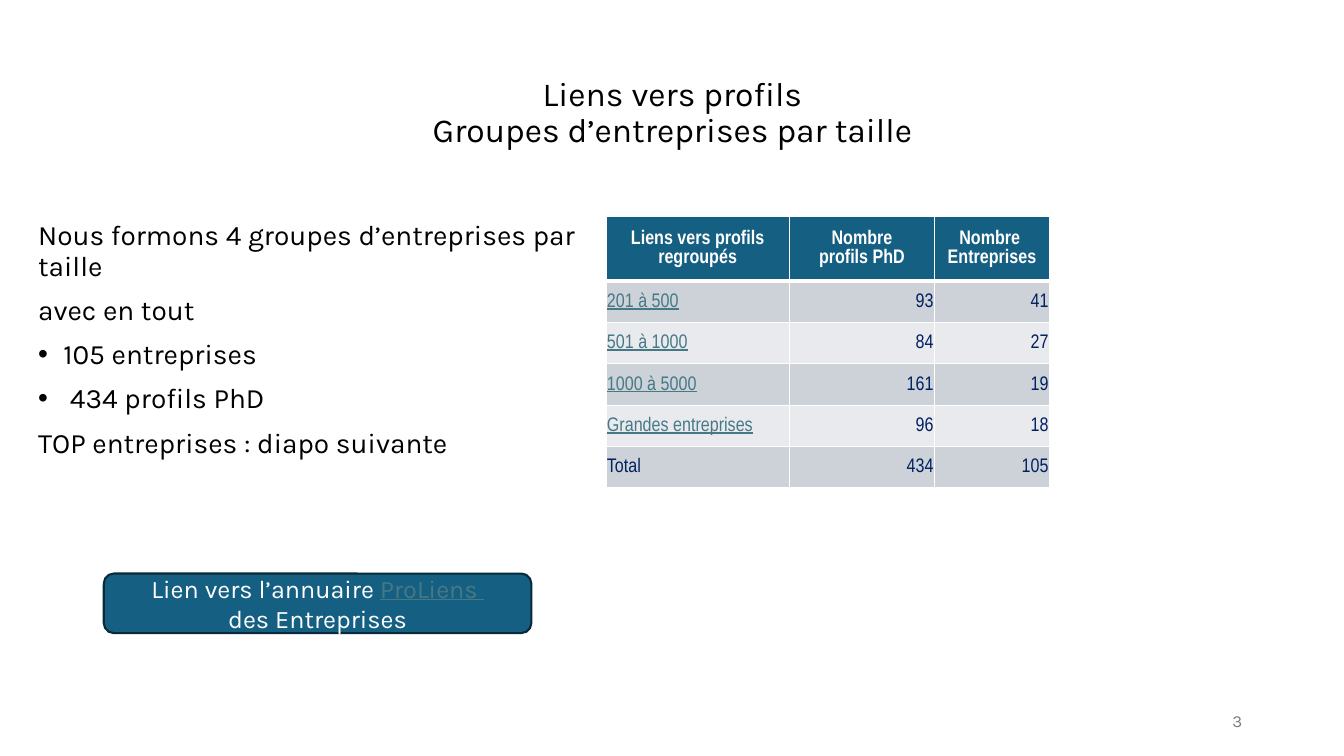
"""Build the slide on company groups by size, with its table and directory button."""
from dataclasses import dataclass

from lxml import etree
from pptx import Presentation
from pptx.dml.color import RGBColor
from pptx.enum.shapes import MSO_SHAPE
from pptx.enum.text import MSO_ANCHOR, PP_ALIGN
from pptx.oxml.ns import qn
from pptx.util import Inches, Pt

LEFT, CENTER, RIGHT = PP_ALIGN.LEFT, PP_ALIGN.CENTER, PP_ALIGN.RIGHT
TOP, MIDDLE = MSO_ANCHOR.TOP, MSO_ANCHOR.MIDDLE
ROUNDED = MSO_SHAPE.ROUNDED_RECTANGLE

BODY_FONT, TABLE_FONT = "Karla", "Arial Narrow"
BLACK, WHITE, GREY = "000000", "FFFFFF", "797979"
TEAL, DARK_TEAL, LINK, NAVY = "156082", "092A39", "467886", "002060"
BANDS = ("CCD2D8", "E8EAED")

HEADERS = (("Liens vers profils regroupés",), ("Nombre", "profils PhD"), ("Nombre ", "Entreprises"))
GROUPS = (
    ("201 à 500", "93", "41"),
    ("501 à 1000", "84", "27"),
    ("1000 à 5000", "161", "19"),
    ("Grandes entreprises", "96", "18"),
    ("Total", "434", "105"),
)
COLUMN_WIDTHS = (1.82, 1.44, 1.14)
HEADER_HEIGHT, ROW_HEIGHT = 0.64, 0.41


@dataclass(frozen=True)
class Style:
    size: float
    color: str
    font: str = BODY_FONT
    bold: bool = False
    underline: bool = False


@dataclass(frozen=True)
class Line:
    spans: tuple[tuple[str, Style], ...]
    align: PP_ALIGN = LEFT
    spacing: float = 1.0
    before: float = 0
    bullet: bool = False


@dataclass(frozen=True)
class TextBlock:
    area: tuple[float, float, float, float]
    anchor: MSO_ANCHOR
    lines: tuple[Line, ...]


TITLE = Style(24, BLACK)
BODY = Style(20, BLACK)
BUTTON = Style(18, WHITE)
BUTTON_LINK = Style(18, LINK, underline=True)
HEADER = Style(14, WHITE, TABLE_FONT, bold=True)
VALUE = Style(14, NAVY, TABLE_FONT)
GROUP_LINK = Style(14, LINK, TABLE_FONT, underline=True)


def body_line(text: str, before: float = 10, bullet: bool = False) -> Line:
    """Return one line of the body text."""
    return Line(((text, BODY),), spacing=0.9, before=before, bullet=bullet)


TEXT_BLOCKS = (
    TextBlock((0.92, 0.4, 11.5, 1.45), MIDDLE, (
        Line((("Liens vers profils", TITLE), ("\n", TITLE), ("Groupes d’entreprises par taille", TITLE)),
             CENTER, 0.9),
    )),
    TextBlock((0.28, 2.15, 5.53, 3.23), TOP, (
        body_line("Nous formons 4 groupes d’entreprises par taille", before=0),
        body_line("avec en tout"),
        body_line("105 entreprises", bullet=True),
        body_line(" 434 profils PhD", bullet=True),
        body_line("TOP entreprises : diapo suivante"),
    )),
    TextBlock((9.42, 6.95, 3, 0.4), MIDDLE, (Line((("3", Style(12, GREY)),), RIGHT),)),
)
BUTTON_LINES = (
    Line((("Lien vers l’annuaire ", BUTTON), ("ProLiens ", BUTTON_LINK)), CENTER),
    Line((("des Entreprises", BUTTON),), CENTER),
)


def rgb(value: str) -> RGBColor:
    """Turn a hex string into a colour."""
    return RGBColor.from_string(value)


def write_lines(frame, lines: tuple[Line, ...]) -> None:
    """Write the lines into a text frame, run by run."""
    for index, line in enumerate(lines):
        para = frame.paragraphs[0] if index == 0 else frame.add_paragraph()
        para.alignment = line.align
        para.line_spacing = line.spacing
        para.space_before = Pt(line.before)
        if line.bullet:
            properties = para._p.get_or_add_pPr()
            properties.set("marL", str(Inches(0.25)))
            properties.set("indent", str(-Inches(0.25)))
            etree.SubElement(properties, qn("a:buFont"), typeface="Arial")
            etree.SubElement(properties, qn("a:buChar"), char="•")
        for text, style in line.spans:
            if text == "\n":
                para.add_line_break()
                continue
            span = para.add_run()
            span.text = text
            span.font.name = style.font
            span.font.size = Pt(style.size)
            span.font.bold = style.bold
            span.font.underline = style.underline
            span.font.color.rgb = rgb(style.color)


def add_text_block(page, block: TextBlock) -> None:
    """Add a wrapped text box."""
    box = page.shapes.add_textbox(*map(Inches, block.area))
    frame = box.text_frame
    frame.word_wrap = True
    frame.vertical_anchor = block.anchor
    write_lines(frame, block.lines)


def set_borders(cell, top: float, bottom: float) -> None:
    """Draw white borders around a cell."""
    properties = cell._tc.get_or_add_tcPr()
    widths = {"a:lnL": 1, "a:lnR": 1, "a:lnT": top, "a:lnB": bottom}
    for index, (tag, width) in enumerate(widths.items()):
        border = etree.Element(qn(tag), w=str(Pt(width)))
        fill = etree.SubElement(border, qn("a:solidFill"))
        etree.SubElement(fill, qn("a:srgbClr"), val=WHITE)
        properties.insert(index, border)


def fill_cell(cell, color: str, lines: tuple[Line, ...], top: float = 1, bottom: float = 1) -> None:
    """Fill a cell with its colour, borders and text."""
    cell.fill.solid()
    cell.fill.fore_color.rgb = rgb(color)
    cell.vertical_anchor = MIDDLE
    set_borders(cell, top, bottom)
    write_lines(cell.text_frame, lines)


def add_group_table(page) -> None:
    """Add the table of company groups."""
    height = HEADER_HEIGHT + ROW_HEIGHT * len(GROUPS)
    area = (6.01, 2.15, sum(COLUMN_WIDTHS), height)
    table = page.shapes.add_table(len(GROUPS) + 1, len(HEADERS), *map(Inches, area)).table
    for column, width in zip(table.columns, COLUMN_WIDTHS):
        column.width = Inches(width)
    for index, row in enumerate(table.rows):
        row.height = Inches(ROW_HEIGHT if index else HEADER_HEIGHT)
    for column, texts in enumerate(HEADERS):
        lines = tuple(Line(((text, HEADER),), CENTER) for text in texts)
        fill_cell(table.cell(0, column), TEAL, lines, bottom=3)
    for row, values in enumerate(GROUPS, start=1):
        for column, text in enumerate(values):
            cell = table.cell(row, column)
            cell.margin_left = cell.margin_right = cell.margin_top = Inches(0.01)
            cell.margin_bottom = Inches(0)
            linked = column == 0 and row < len(GROUPS)
            line = Line(((text, GROUP_LINK if linked else VALUE),), RIGHT if column else LEFT)
            fill_cell(cell, BANDS[(row - 1) % 2], (line,), top=3 if row == 1 else 1)


def add_directory_button(page) -> None:
    """Add the rounded button for the directory."""
    button = page.shapes.add_shape(ROUNDED, *map(Inches, (1.03, 5.69, 4.24, 0.59)))
    button.shadow.inherit = False
    button.fill.solid()
    button.fill.fore_color.rgb = rgb(TEAL)
    button.line.color.rgb = rgb(DARK_TEAL)
    button.line.width = Pt(1.5)
    button.text_frame.word_wrap = True
    button.text_frame.vertical_anchor = MIDDLE
    write_lines(button.text_frame, BUTTON_LINES)


def main() -> None:
    """Build and save the deck."""
    deck = Presentation()
    deck.slide_width, deck.slide_height = Inches(13.33), Inches(7.5)
    page = deck.slides.add_slide(deck.slide_layouts[6])
    for block in TEXT_BLOCKS:
        add_text_block(page, block)
    add_group_table(page)
    add_directory_button(page)
    deck.save("out.pptx")


if __name__ == "__main__":
    main()
